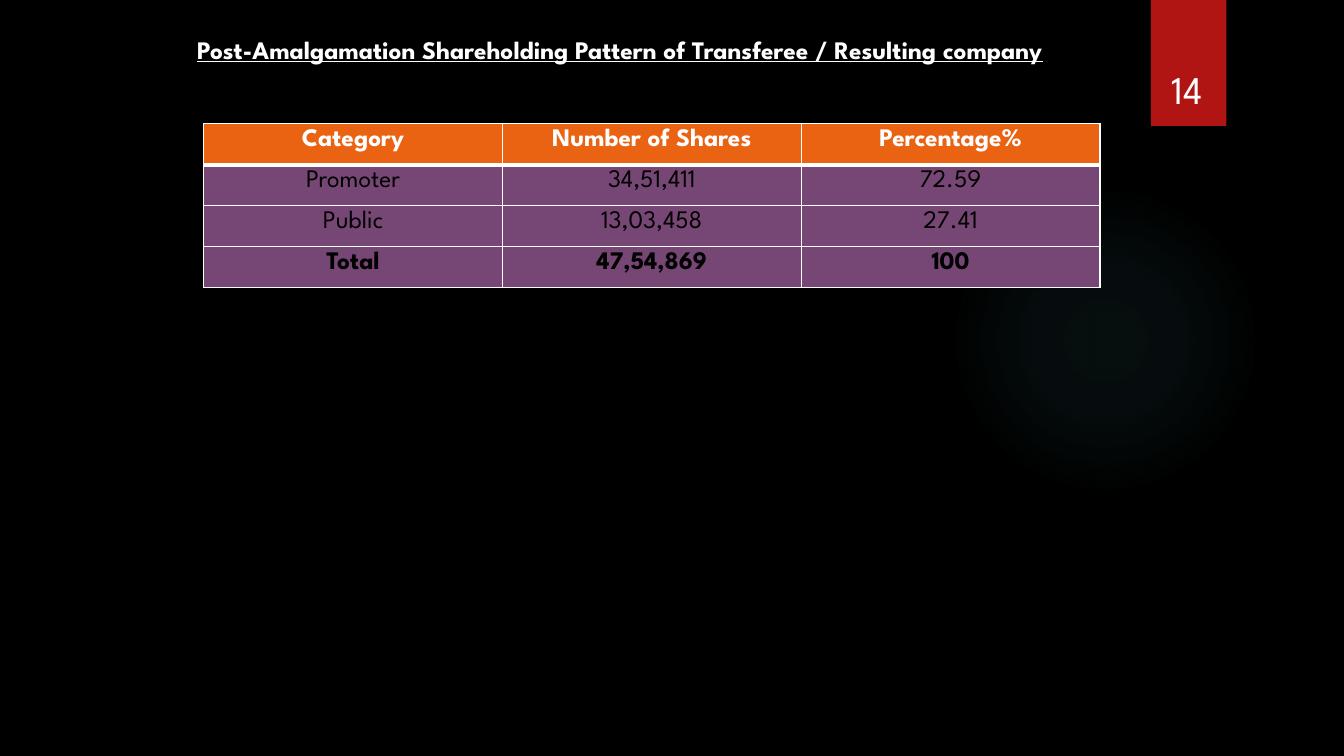
from dataclasses import dataclass

from lxml import etree
from pptx import Presentation
from pptx.dml.color import RGBColor
from pptx.enum.shapes import MSO_SHAPE
from pptx.enum.text import MSO_ANCHOR, MSO_AUTO_SIZE, PP_ALIGN
from pptx.oxml import parse_xml
from pptx.oxml.ns import nsdecls, qn
from pptx.util import Inches, Pt

CENTER = PP_ALIGN.CENTER
TOP, BOTTOM = MSO_ANCHOR.TOP, MSO_ANCHOR.BOTTOM
NO_AUTOFIT = MSO_AUTO_SIZE.NONE
RECTANGLE, OVAL = MSO_SHAPE.RECTANGLE, MSO_SHAPE.OVAL
TITLE_ONLY_LAYOUT = 5
GRID_COLUMNS, GRID_ROWS = 160, 90


@dataclass(frozen=True)
class Theme:
    font: str = "League Spartan"
    background: str = "000000"
    light: str = "FFFFFF"
    dark: str = "000000"
    tab: str = "B01513"
    glow: str = "50B9C1"
    header: str = "EA6312"
    body: str = "764674"
    text_size: int = 18
    number_size: int = 28
    line: int = 1
    header_line: int = 3


def write_text(frame, text, theme, size, color, bold=False, underline=False, anchor=TOP):
    """Write one centred paragraph into a text frame."""
    frame.word_wrap = True
    frame.vertical_anchor = anchor
    paragraph = frame.paragraphs[0]
    paragraph.alignment = CENTER
    run = paragraph.add_run()
    run.text = text
    font = run.font
    font.name, font.size = theme.font, Pt(size)
    font.bold, font.underline = bold, underline
    font.color.rgb = RGBColor.from_string(color)


class SlideBuilder:
    def __init__(self, presentation, theme):
        self.theme = theme
        self.column = presentation.slide_width / GRID_COLUMNS
        self.row = presentation.slide_height / GRID_ROWS
        self.slide = presentation.slides.add_slide(presentation.slide_layouts[TITLE_ONLY_LAYOUT])
        self.fill(self.slide.background, theme.background)

    def place(self, left, top, width, height):
        return (round(left * self.column), round(top * self.row),
                round(width * self.column), round(height * self.row))

    def fill(self, target, color):
        target.fill.solid()
        target.fill.fore_color.rgb = RGBColor.from_string(color)

    def shape(self, kind, color, *box):
        shape = self.slide.shapes.add_shape(kind, *self.place(*box))
        shape.shadow.inherit = False
        shape.line.fill.background()
        self.fill(shape, color)
        return shape

    def glow(self, color, stops, *box):
        """Add a circle that fades out; stops are (position, opacity) in percent."""
        shape = self.shape(OVAL, color, *box)
        stop_xml = "".join(
            f'<a:gs pos="{position * 1000}"><a:srgbClr val="{color}">'
            f'<a:alpha val="{opacity * 1000}"/></a:srgbClr></a:gs>'
            for position, opacity in stops)
        gradient = parse_xml(
            f'<a:gradFill {nsdecls("a")} rotWithShape="1"><a:gsLst>{stop_xml}</a:gsLst>'
            '<a:path path="circle"><a:fillToRect l="50000" t="50000" r="50000" b="50000"/>'
            '</a:path></a:gradFill>')
        properties = shape.element.spPr
        properties.replace(properties.find(qn("a:solidFill")), gradient)

    def title(self, text, *box):
        title = self.slide.shapes.title
        title.left, title.top, title.width, title.height = self.place(*box)
        title.text_frame.auto_size = NO_AUTOFIT
        write_text(title.text_frame, text, self.theme, self.theme.text_size,
                   self.theme.light, bold=True, underline=True)

    def text(self, text, size, anchor, *box):
        frame = self.slide.shapes.add_textbox(*self.place(*box)).text_frame
        write_text(frame, text, self.theme, size, self.theme.light, anchor=anchor)

    def borders(self, cell, **widths):
        properties = cell._tc.get_or_add_tcPr()
        for side, width in widths.items():
            line = etree.SubElement(properties, qn(f"a:ln{side}"), w=str(Pt(width)))
            solid = etree.SubElement(line, qn("a:solidFill"))
            etree.SubElement(solid, qn("a:srgbClr"), val=self.theme.light)

    def table(self, rows, *box):
        """Add a table with a header row first and a total row last."""
        theme = self.theme
        left, top, width, height = self.place(*box)
        table = self.slide.shapes.add_table(
            len(rows), len(rows[0]), left, top, width, height).table
        for table_row in table.rows:
            table_row.height = height // len(rows)
        for row_index, values in enumerate(rows):
            is_header, is_total = row_index == 0, row_index == len(rows) - 1
            above = theme.header_line if row_index == 1 else theme.line
            below = theme.header_line if is_header else theme.line
            for column_index, value in enumerate(values):
                cell = table.cell(row_index, column_index)
                self.borders(cell, L=theme.line, R=theme.line, T=above, B=below)
                self.fill(cell, theme.header if is_header else theme.body)
                write_text(cell.text_frame, value, theme, theme.text_size,
                           theme.light if is_header else theme.dark,
                           bold=is_header or is_total)


def main():
    presentation = Presentation()
    presentation.slide_width, presentation.slide_height = Inches(13.33), Inches(7.5)
    theme = Theme()
    builder = SlideBuilder(presentation, theme)

    # Backdrop: soft glow and the page tab
    builder.glow(theme.glow, [(0, 7), (36, 6), (69, 0), (100, 0)], 113, 22, 37, 37)
    builder.shape(RECTANGLE, theme.tab, 137, 0, 9, 15)

    # Title
    builder.title("Post-Amalgamation Shareholding Pattern of Transferee / Resulting company",
                  14.3, 3.5, 119, 4.8)

    # Shareholding table
    builder.table([
        ("Category", "Number of Shares", "Percentage%"),
        ("Promoter", "34,51,411", "72.59"),
        ("Public", "13,03,458", "27.41"),
        ("Total", "47,54,869", "100"),
    ], 24.25, 14.75, 106.7, 19.45)

    # Page number
    builder.text("14", theme.number_size, BOTTOM, 135.85, 3.85, 11, 10.1)

    presentation.save("out.pptx")


if __name__ == "__main__":
    main()
